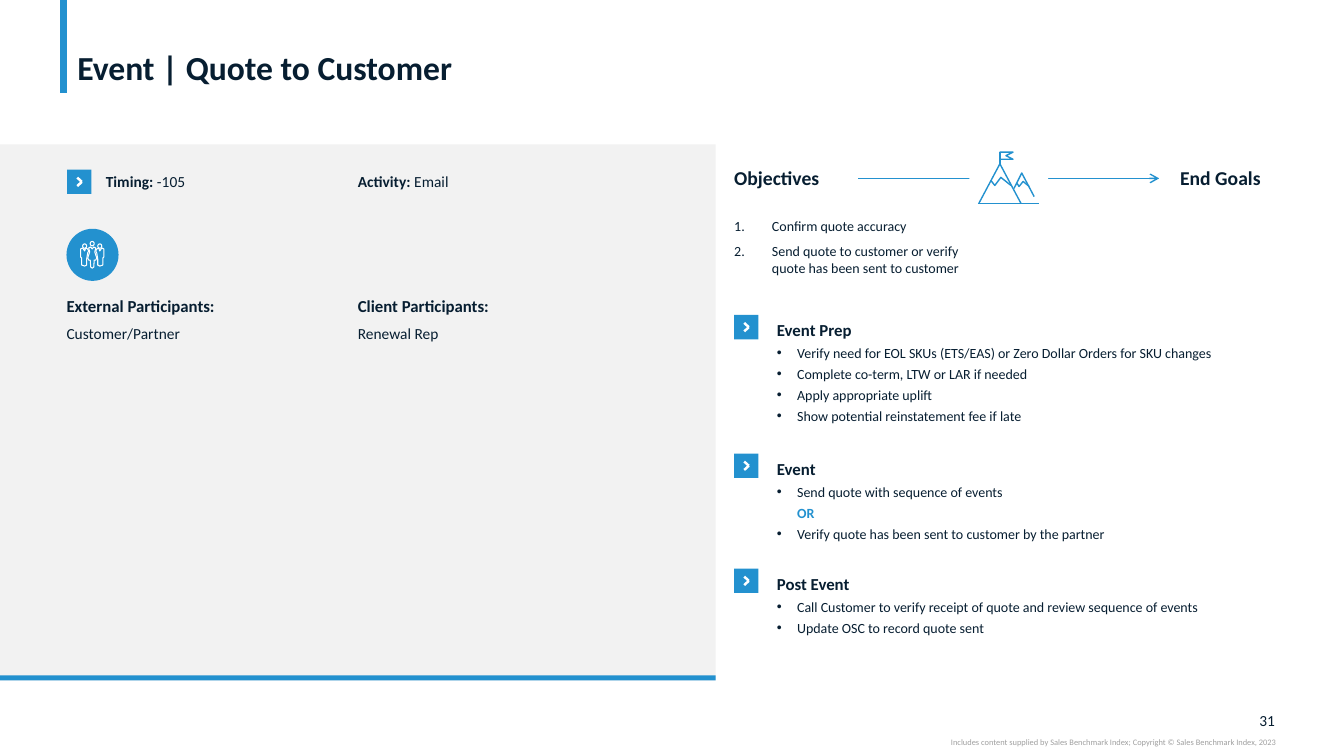
from dataclasses import dataclass
from lxml.etree import SubElement
from pptx import Presentation
from pptx.dml.color import RGBColor
from pptx.enum.shapes import MSO_CONNECTOR, MSO_SHAPE
from pptx.enum.text import MSO_ANCHOR, MSO_AUTO_SIZE, PP_ALIGN
from pptx.oxml.ns import qn
from pptx.util import Inches, Pt

COLS, ROWS = 160, 90
CELL = Inches(7.5) / ROWS
INK, BLUE, GREY, WHITE, MUTED = "071E31", "2391CF", "F2F2F2", "FFFFFF", "A0A0A0"
LEFT, RIGHT = PP_ALIGN.LEFT, PP_ALIGN.RIGHT


def grid(*cells):
    """Turn counts of grid cells into lengths."""
    return [int(round(n * CELL)) for n in cells]


def tint(code):
    """Turn a hex string into a colour."""
    return RGBColor.from_string(code)


@dataclass
class Para:
    """One paragraph, with its runs given as (text, bold) pairs."""
    runs: list
    size: float = 10
    hue: str = INK
    mark: str = ""
    dent: float = 0
    hang: float = 0
    lead: float = 1
    after: float = 0
    align: PP_ALIGN = LEFT


@dataclass
class Page:
    """The style and the slide that is being drawn."""
    slide: object
    font: str = "Calibri"

    def pour(self, frame, paras, wrap=True, anchor=MSO_ANCHOR.TOP, side=0):
        """Fill a text frame run by run."""
        frame.word_wrap, frame.auto_size = wrap, MSO_AUTO_SIZE.NONE
        frame.vertical_anchor = anchor
        frame.margin_left, frame.margin_right = grid(side, side)
        frame.margin_top = frame.margin_bottom = 0
        for i, para in enumerate(paras):
            line = frame.add_paragraph() if i else frame.paragraphs[0]
            props = line._p.get_or_add_pPr()
            dent, hang = grid(para.dent, -para.hang)
            props.set("marL", str(dent))
            props.set("indent", str(hang))
            if para.mark == "1.":
                SubElement(props, qn("a:buAutoNum"), type="arabicPeriod")
            elif para.mark:
                SubElement(props, qn("a:buFont"), typeface="Arial")
                SubElement(props, qn("a:buChar"), char=para.mark)
            else:
                SubElement(props, qn("a:buNone"))
            line.alignment, line.line_spacing = para.align, para.lead
            line.space_before, line.space_after = Pt(0), Pt(para.after)
            for text, bold in para.runs:
                run = line.add_run()
                run.text = text
                run.font.name, run.font.size = self.font, Pt(para.size)
                run.font.bold, run.font.color.rgb = bold, tint(para.hue)

    def text(self, area, paras, **look):
        """Add a text box."""
        box = self.slide.shapes.add_textbox(*grid(*area))
        self.pour(box.text_frame, paras, **look)

    def hold(self, key, area, paras, **look):
        """Move and fill a placeholder."""
        box = self.slide.placeholders[key]
        box.left, box.top, box.width, box.height = grid(*area)
        self.pour(box.text_frame, paras, **look)

    def shape(self, kind, area, fill=None, edge=None, width=0.75):
        """Add a preset shape."""
        item = self.slide.shapes.add_shape(kind, *grid(*area))
        self.paint(item, fill, edge, width)

    def paint(self, item, fill, edge, width):
        """Set the fill and outline of a shape."""
        item.shadow.inherit = False
        if fill:
            item.fill.solid()
            item.fill.fore_color.rgb = tint(fill)
        else:
            item.fill.background()
        if edge:
            item.line.color.rgb, item.line.width = tint(edge), Pt(width)
        else:
            item.line.fill.background()

    def line(self, ends, hue, width, arrow=False):
        """Add a straight line or arrow."""
        item = self.slide.shapes.add_connector(MSO_CONNECTOR.STRAIGHT, *grid(*ends))
        item.line.color.rgb, item.line.width = tint(hue), Pt(width)
        props = item._element.spPr
        if arrow:
            SubElement(props.get_or_add_ln(), qn("a:tailEnd"), type="arrow")
        SubElement(props, qn("a:effectLst"))

    def trace(self, dots, hue, width, close=False):
        """Add an unfilled outline through points."""
        first, *rest = [grid(*dot) for dot in dots]
        form = self.slide.shapes.build_freeform(*first)
        form.add_line_segments(rest, close=close)
        self.paint(form.convert_to_shape(), None, hue, width)

    def badge(self, x, y):
        """Add a blue square with a white chevron."""
        self.shape(MSO_SHAPE.RECTANGLE, (x, y, 2.9, 2.9), BLUE)
        for rise in (-0.5, 0.5):
            self.line((x + 1.2, y + 1.45 + rise, x + 1.75, y + 1.45), WHITE, 1.75)

    def peaks(self):
        """Draw the mountains and flag."""
        for dots in (
            [(116.4, 24.24), (123.72, 24.24)],
            [(116.52, 24.24), (119.04, 19.5), (121.56, 24.24)],
            [(120.72, 22.44), (121.65, 20.6), (123.12, 23.4)],
            [(117.96, 21.48), (118.44, 22.08), (119.16, 21.12), (120.36, 22.08)],
            [(121.08, 21.84), (121.32, 22.2), (121.8, 21.6), (122.52, 22.2)],
            [(119.04, 19.5), (119.04, 18.12)],
        ):
            self.trace(dots, BLUE, 1)
        flag = [(120.6, 18.96), (119.04, 18.96), (119.04, 18.12),
                (120.6, 18.12), (119.76, 18.54)]
        self.trace(flag, BLUE, 1, close=True)

    def crowd(self, mid):
        """Draw three people, mirrored about a centre."""
        self.shape(MSO_SHAPE.OVAL, (7.92, 27.24, 6.2, 6.2), BLUE)
        half = [(0, 29.64), (0.18, 29.4), (0.42, 29.52), (0.3, 30), (0.54, 30.72),
                (0.42, 30.96), (0.24, 30.96), (0.18, 31.8), (0, 31.92)]
        body = [(0.9, 29.88), (1.14, 29.52), (1.38, 29.64), (1.38, 30.6),
                (1.26, 30.72), (1.26, 31.56), (0.9, 31.68), (0.66, 31.56),
                (0.66, 30.84), (0.54, 30.12), (0.42, 29.88), (0.54, 29.64),
                (0.78, 29.52)]
        whole = half + [(-x, y) for x, y in half[-2:0:-1]]
        left = [(-x, y) for x, y in body]
        for dots in (left, body, whole):
            self.trace([(mid + x, y) for x, y in dots], WHITE, 0.75, close=True)
        for shift, top in ((-0.9, 29.04), (0.9, 29.04), (0, 28.75)):
            area = (mid + shift - 0.24, top, 0.48, 0.52)
            self.shape(MSO_SHAPE.OVAL, area, edge=WHITE)


def main():
    """Build and save the slide."""
    deck = Presentation()
    deck.slide_width, deck.slide_height = grid(COLS, ROWS)
    page = Page(deck.slides.add_slide(deck.slide_layouts[4]))

    page.line((7.56, 0, 7.56, 11.1), BLUE, 5)
    page.hold(0, (8, 0.5, 144, 10), [Para([("Event | Quote to Customer", True)], 24, lead=0.9)],
              anchor=MSO_ANCHOR.BOTTOM, side=1.2)
    page.shape(MSO_SHAPE.RECTANGLE, (0, 17.2, 85.2, 63.8), GREY)
    page.shape(MSO_SHAPE.RECTANGLE, (0, 80.4, 85.2, 0.6), BLUE)

    page.badge(8, 20.2)
    for x, name, value in ((12.6, "Timing: ", "-105"), (42.6, "Activity: ", "Email")):
        page.text((x, 20.5, 29, 2.3), [Para([(name, True), (value, False)], 11)])
    page.crowd(10.98)
    for x, name, value in ((7.92, "External Participants:", "Customer/Partner"),
                           (42.6, "Client Participants:", "Renewal Rep")):
        page.text((x, 35.2, 33, 5.6), [Para([(name, True)], 12, after=6),
                                       Para([(value, False)], 11)])

    for x, name in ((87.4, "Objectives"), (140.5, "End Goals")):
        page.text((x, 19.8, 12, 2.9), [Para([(name, True)], 14)], wrap=False)
    page.line((102.2, 21.24, 138, 21.24), BLUE, 1, arrow=True)
    page.shape(MSO_SHAPE.RECTANGLE, (115.4, 16.6, 9.4, 9.2), WHITE)
    page.peaks()
    goals = ("Confirm quote accuracy",
             "Send quote to customer or verify quote has been sent to customer")
    page.hold(1, (87.4, 25.9, 28.1, 9.1),
              [Para([(goal, False)], mark="1.", dent=4.5, hang=4.5, after=6) for goal in goals])

    steps = (
        (2, 37.5, 13, "Event Prep", (
            "Verify need for EOL SKUs (ETS/EAS) or Zero Dollar Orders for SKU changes",
            "Complete co-term, LTW or LAR if needed",
            "Apply appropriate uplift",
            "Show potential reinstatement fee if late")),
        (3, 54, 10.5, "Event", (
            "Send quote with sequence of events", "OR",
            "Verify quote has been sent to customer by the partner")),
        (4, 67.7, 8, "Post Event", (
            "Call Customer to verify receipt of quote and review sequence of events",
            "Update OSC to record quote sent")),
    )
    for key, y, tall, name, points in steps:
        paras = [Para([(name, True)], 12, lead=1.25)]
        for point in points:
            either = point == "OR"
            paras.append(Para([(point, either)], hue=BLUE if either else INK,
                              mark="" if either else "•", dent=2.4,
                              hang=0 if either else 2.4, lead=1.25))
        page.hold(key, (92.5, y, 59.5, tall), paras)
        page.badge(87.4, y)

    page.text((147.8, 84.6, 4, 2.3), [Para([("31", False)], 11, align=RIGHT)],
              anchor=MSO_ANCHOR.MIDDLE)
    credit = ("Includes content supplied by Sales Benchmark Index; "
              "Copyright © Sales Benchmark Index, 2023")
    page.text((90, 87.8, 61.9, 1.2), [Para([(credit, False)], 6, MUTED, align=RIGHT)])
    deck.save("out.pptx")


if __name__ == "__main__":
    main()
